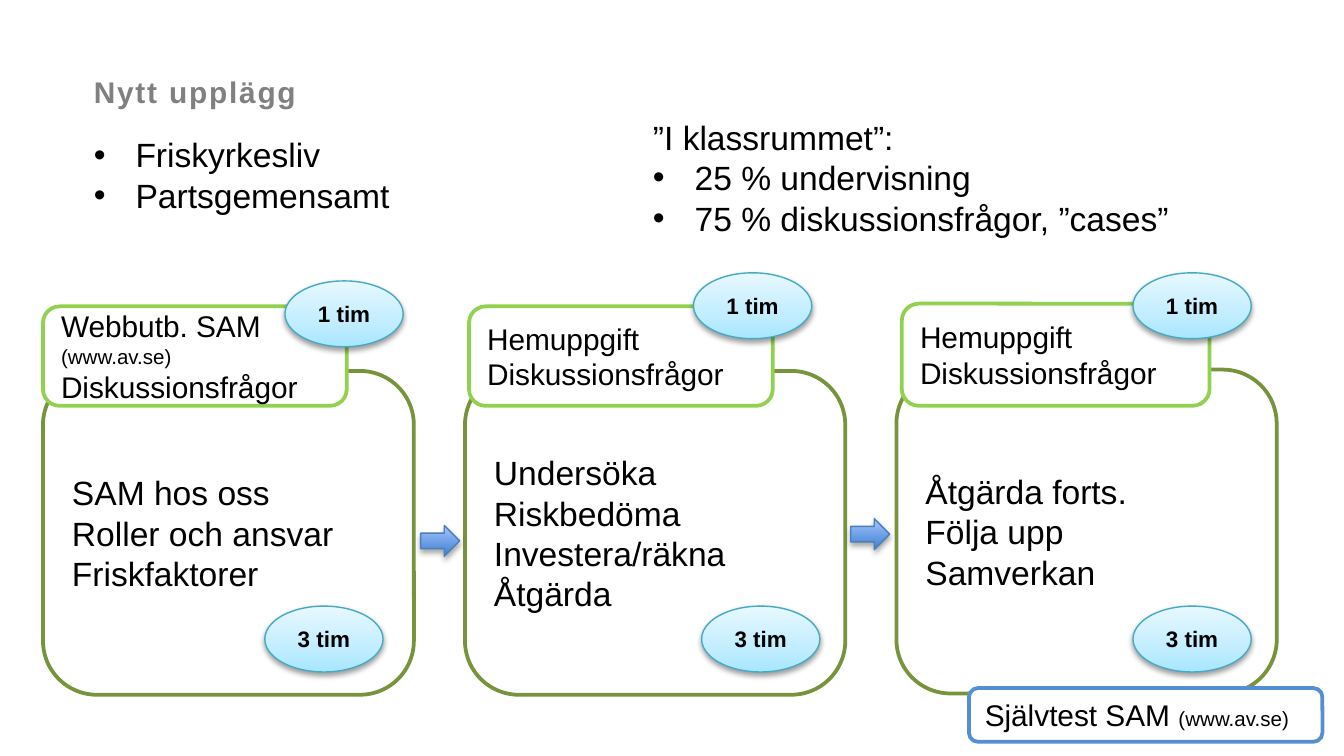
import pptx
import pptx.util
import pptx.dml.color
import pptx.enum.shapes
import pptx.enum.text
import pptx.oxml.ns
from lxml import etree

Inches, Pt = pptx.util.Inches, pptx.util.Pt
RGBColor = pptx.dml.color.RGBColor
MSO_SHAPE = pptx.enum.shapes.MSO_SHAPE
PP_ALIGN, MSO_ANCHOR = pptx.enum.text.PP_ALIGN, pptx.enum.text.MSO_ANCHOR
qn = pptx.oxml.ns.qn

BLACK = RGBColor(0x00, 0x00, 0x00)
WHITE = RGBColor(0xFF, 0xFF, 0xFF)
GREY = RGBColor(0x80, 0x80, 0x80)
OLIVE = RGBColor(0x77, 0x93, 0x3C)
LIME = RGBColor(0x92, 0xD0, 0x50)
BLUE = RGBColor(0x55, 0x8E, 0xD5)
ARROW_LINE = RGBColor(0x4B, 0x7E, 0xBC)
OVAL_LINE = RGBColor(0x46, 0xAA, 0xC5)
ARROW_STOPS = [(0, RGBColor(0x3F, 0x80, 0xCE)), (100, RGBColor(0xA4, 0xC4, 0xFF))]
OVAL_STOPS = [(0, RGBColor(0xA7, 0xE6, 0xFF)), (35, RGBColor(0xC1, 0xED, 0xFF)),
              (100, RGBColor(0xE7, 0xF8, 0xFF))]

# Content: a paragraph is a list of (text, size) runs
TITLE = "Nytt upplägg"
LINK = ("(www.av.se)", 11)
HOMEWORK = [[("Hemuppgift", 16)], [("Diskussionsfrågor", 16)]]
STEPS = [
    {"box": (0.32, 2.76, 2.76, 2.41), "tab_box": (0.32, 2.28, 2.26, 0.74),
     "topics": ["SAM hos oss", "Roller och ansvar", "Friskfaktorer"],
     "tab": [[("Webbutb. SAM ", 16), LINK], [("Diskussionsfrågor", 16)]],
     "before": (2.12, 2.09), "meeting": (1.97, 4.51)},
    {"box": (3.46, 2.76, 2.83, 2.41), "tab_box": (3.49, 2.28, 2.26, 0.74),
     "topics": ["Undersöka", "Riskbedöma", "Investera/räkna", "Åtgärda"],
     "tab": HOMEWORK, "before": (5.16, 2.03), "meeting": (5.22, 4.51)},
    {"box": (6.67, 2.75, 2.83, 2.41), "tab_box": (6.71, 2.26, 2.29, 0.76),
     "topics": ["Åtgärda forts.", "Följa upp", "Samverkan"],
     "tab": HOMEWORK, "before": (8.43, 2.03), "meeting": (8.43, 4.51)},
]
SELF_TEST = [[("Självtest SAM ", 16), LINK]]
ARROWS = [(3.13, 3.91), (6.33, 3.86)]
# Note boxes: position, then (text, bulleted) lines
NOTES = [
    ((0.6, 0.95, 2.98, 0.71), [("Friskyrkesliv", True), ("Partsgemensamt", True)]),
    ((4.76, 0.82, 4.22, 1.01), [("”I klassrummet”:", False), ("25 % undervisning", True),
                                ("75 % diskussionsfrågor, ”cases”", True)]),
]

# Widescreen 16:9 slide
prs = pptx.Presentation()
prs.slide_width = Inches(10)
prs.slide_height = prs.slide_width * 9 // 16
s = prs.slides.add_slide(prs.slide_layouts[6])


def write(tf, paragraphs, color=BLACK, bold=False, align=PP_ALIGN.LEFT):
    tf.word_wrap = True
    for i, runs in enumerate(paragraphs):
        p = tf.add_paragraph() if i else tf.paragraphs[0]
        p.alignment = align
        for text, size in runs:
            r = p.add_run()
            r.text = text
            r.font.name, r.font.size, r.font.bold = "Arial", Pt(size), bold
            r.font.color.rgb = color


def add_shape(kind, box, line, width):
    sp = s.shapes.add_shape(kind, *map(Inches, box))
    sp.shadow.inherit = False
    sp.line.color.rgb, sp.line.width = line, Pt(width)
    sp.text_frame.vertical_anchor = MSO_ANCHOR.MIDDLE
    return sp


def add_card(box, line, paragraphs):
    sp = add_shape(MSO_SHAPE.ROUNDED_RECTANGLE, box, line, 2)
    sp.fill.solid()
    sp.fill.fore_color.rgb = WHITE
    write(sp.text_frame, paragraphs)


def add_color(parent, tag, color, **attrs):
    el = etree.SubElement(parent, qn(tag), **attrs)
    return etree.SubElement(el, qn("a:srgbClr"), val=str(color))


def add_glossy(kind, box, line, stops, shadow_alpha, distance):
    sp = add_shape(kind, box, line, 0.75)
    sp.fill.gradient()
    sp.fill.gradient_angle = 90
    props = sp._element.spPr
    gs_list = props.find(".//" + qn("a:gsLst"))
    for stop in list(gs_list):
        gs_list.remove(stop)
    for pos, color in stops:
        add_color(gs_list, "a:gs", color, pos=str(pos * 1000))
    shade = add_color(props.find(qn("a:effectLst")), "a:outerShdw", BLACK,
                      blurRad=str(Pt(3.1)), dist=str(Pt(distance)),
                      dir="5400000", rotWithShape="0")
    etree.SubElement(shade, qn("a:alpha"), val=str(shadow_alpha * 1000))
    return sp


def add_duration(at, text):
    sp = add_glossy(MSO_SHAPE.OVAL, (*at, 0.88, 0.49), OVAL_LINE, OVAL_STOPS, 38, 1.6)
    write(sp.text_frame, [[(text, 12)]], bold=True, align=PP_ALIGN.CENTER)


# Title
tf = s.shapes.add_textbox(*map(Inches, (0.6, 0.5, 7.03, 0.23))).text_frame
write(tf, [[(TITLE, 16)]], GREY, bold=True)
tf.paragraphs[0].runs[0].font._element.set("spc", "100")

# Step cards, their tabs and the self-test
for step in STEPS:
    add_card(step["box"], OLIVE, [[(topic, 18)] for topic in step["topics"]])
for step in STEPS:
    add_card(step["tab_box"], LIME, step["tab"])
add_card((7.21, 5.12, 2.63, 0.4), BLUE, SELF_TEST)

# Arrows and durations
for at in ARROWS:
    add_glossy(MSO_SHAPE.RIGHT_ARROW, (*at, 0.29, 0.23), ARROW_LINE, ARROW_STOPS, 35, 1.8)
for step in STEPS:
    add_duration(step["before"], "1 tim")
    add_duration(step["meeting"], "3 tim")

# Notes above the steps
for box, lines in NOTES:
    tf = s.shapes.add_textbox(*map(Inches, box)).text_frame
    write(tf, [[(text, 18)] for text, _ in lines])
    for p, (_, bulleted) in zip(tf.paragraphs, lines):
        if bulleted:
            pPr = p._p.get_or_add_pPr()
            pPr.set("marL", str(Inches(0.31)))
            pPr.set("indent", str(Inches(-0.31)))
            etree.SubElement(pPr, qn("a:buFont"), typeface="Arial")
            etree.SubElement(pPr, qn("a:buChar"), char="•")

prs.save("out.pptx")
